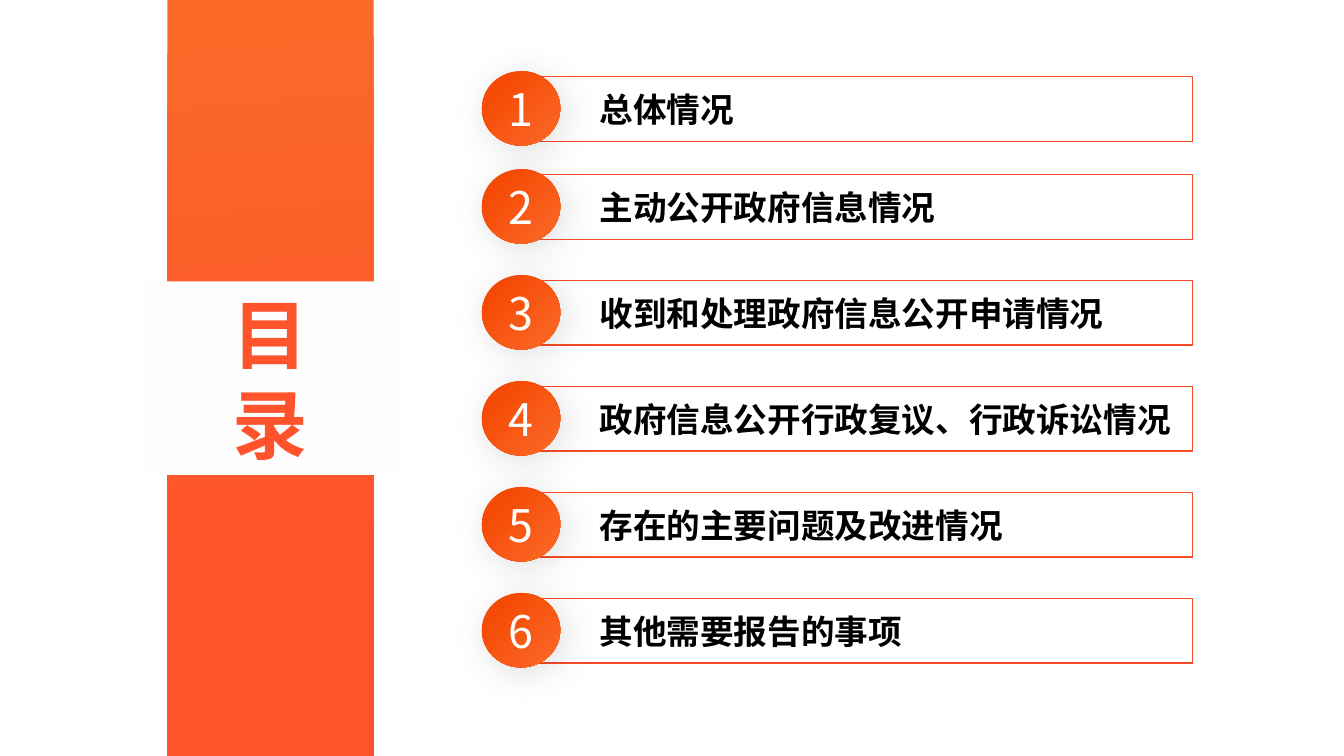
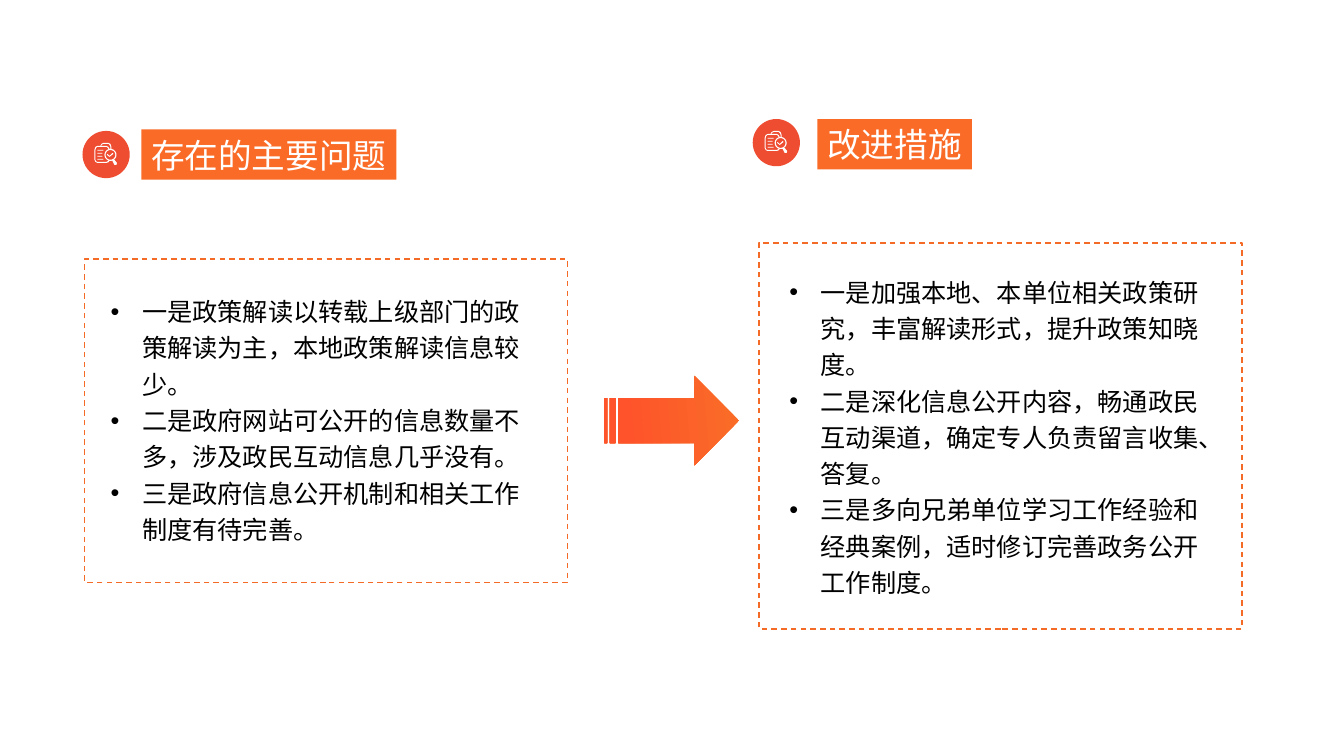
from dataclasses import dataclass
from math import cos, pi, sin

from lxml import etree
from pptx import Presentation
from pptx.dml.color import RGBColor
from pptx.enum import dml, shapes, text
from pptx.oxml import ns
from pptx.util import Cm, Pt

FONT = "Noto Sans CJK SC"
WHITE = RGBColor(0xFF, 0xFF, 0xFF)
BLACK = RGBColor(0x00, 0x00, 0x00)
PAPER = RGBColor(0xFE, 0xFE, 0xFE)
ORANGE = RGBColor(0xFB, 0x69, 0x28)
HEADING_ORANGE = RGBColor(0xFA, 0x6B, 0x27)
ARROW_ORANGE = RGBColor(0xFA, 0x6D, 0x27)
BADGE_ORANGE = RGBColor(0xF5, 0x4A, 0x05)
FRAME_ORANGE = RGBColor(0xF3, 0x6B, 0x27)
RED = RGBColor(0xFE, 0x53, 0x2B)
BAR_RED = RGBColor(0xF7, 0x4B, 0x28)
ICON_RED = RGBColor(0xEE, 0x4D, 0x32)

AGENDA = (
    "总体情况",
    "主动公开政府信息情况",
    "收到和处理政府信息公开申请情况",
    "政府信息公开行政复议、行政诉讼情况",
    "存在的主要问题及改进情况",
    "其他需要报告的事项",
)
AGENDA_TOPS = (1.93, *(4.4 + 2.67 * row for row in range(5)))

GLYPH_GRID = 10
GLYPH_WIDTH = 23
CLIPBOARD = (
    (14, 18), (15, 18), (14, 19.4), (12, 20), (3, 20), (1, 19), (0, 17), (0, 7),
    (1, 4), (3, 3), (6, 3), (7, 1), (9, 0), (14, 0), (16, 1), (17, 4),
    (17, 6), (16, 6), (16, 4), (15, 2), (14, 1), (9, 1), (7, 2), (7, 3),
    (12, 3), (14, 4), (15, 6), (14, 6), (13, 4.6), (12, 4), (3, 4), (1.6, 5),
    (1, 7), (1, 17), (1.6, 18.4), (3, 19), (12, 19),
)
HANDLE = ((20, 17), (18, 18), (20, 22), (22, 22), (22.5, 20))
TICK = ((15, 13), (13, 11), (12.5, 12), (15, 14), (19, 11), (18, 10))
NOTE_LINES = ((7, 9), (10, 8), (13, 8), (16, 9))


@dataclass(frozen=True)
class Area:
    left: float
    top: float
    width: float
    height: float

    def lengths(self) -> tuple:
        return tuple(Cm(side) for side in (self.left, self.top, self.width, self.height))


@dataclass(frozen=True)
class Panel:
    heading: str
    heading_area: Area
    heading_slot: int
    icon_left: float
    icon_top: float
    frame: Area
    insets: tuple
    list_slot: int
    items: tuple


PANELS = (
    Panel(
        "存在的主要问题", Area(3.56, 3.26, 6.43, 1.27), 0, 2.08, 3.3,
        Area(2.13, 6.53, 12.17, 8.15), (0.66, 0.79, 0.89), 2,
        (
            "一是政策解读以转载上级部门的政策解读为主，本地政策解读信息较少。",
            "二是政府网站可公开的信息数量不多，涉及政民互动信息几乎没有。",
            "三是政府信息公开机制和相关工作制度有待完善。",
        ),
    ),
    Panel(
        "改进措施", Area(20.6, 3, 3.89, 1.27), 3, 18.97, 3,
        Area(19.13, 6.12, 12.17, 9.73), (0.76, 0.71, 0.79), 4,
        (
            "一是加强本地、本单位相关政策研究，丰富解读形式，提升政策知晓度。",
            "二是深化信息公开内容，畅通政民互动渠道，确定专人负责留言收集、答复。",
            "三是多向兄弟单位学习工作经验和经典案例，适时修订完善政务公开工作制度。",
        ),
    ),
)


def place(box, area: Area) -> None:
    box.left, box.top, box.width, box.height = area.lengths()


def paint(box, colour: RGBColor) -> None:
    box.fill.solid()
    box.fill.fore_color.rgb = colour


def paint_gradient(box, stops: tuple, clockwise: float) -> None:
    box.fill.gradient()
    box.fill.gradient_angle = 360 - clockwise
    for stop, (position, colour) in zip(box.fill.gradient_stops, stops):
        stop.position = position
        stop.color.rgb = colour


def add_plain(page, kind, area: Area):
    box = page.shapes.add_shape(kind, *area.lengths())
    box.shadow.inherit = False
    box.fill.background()
    box.line.fill.background()
    return box


def outline(box, colour: RGBColor) -> None:
    box.line.color.rgb = colour
    box.line.width = Pt(1)


def write(box, lines: tuple, size: float, colour: RGBColor, bold: bool = False,
          align=text.PP_ALIGN.LEFT, anchor=text.MSO_ANCHOR.MIDDLE, wrap: bool = True) -> None:
    frame = box.text_frame
    frame.text = "\n".join(lines)
    frame.auto_size = text.MSO_AUTO_SIZE.NONE
    frame.word_wrap = wrap
    frame.vertical_anchor = anchor
    for para in frame.paragraphs:
        para.alignment = align
        para.space_before = Pt(0)
        para.font.name = FONT
        para.font.size = Pt(size)
        para.font.bold = bold
        para.font.color.rgb = colour
        defaults = para._p.get_or_add_pPr().get_or_add_defRPr()
        etree.SubElement(defaults, ns.qn("a:ea"), typeface=FONT)


def add_soft_shadow(box) -> None:
    effects = box._element.spPr.find(ns.qn("a:effectLst"))
    shadow = etree.SubElement(
        effects, ns.qn("a:outerShdw"), blurRad=str(Pt(27)), dist=str(Pt(5)),
        dir=str(50 * 60000), algn="ctr", rotWithShape="0")
    colour = etree.SubElement(shadow, ns.qn("a:srgbClr"), val=str(BLACK))
    etree.SubElement(colour, ns.qn("a:alpha"), val="12000")


def add_agenda_row(page, number: int, label: str, top: float) -> None:
    bar = add_plain(page, shapes.MSO_SHAPE.RECTANGLE, Area(12.98, top, 17.07, 1.63))
    outline(bar, BAR_RED)
    bar.text_frame.margin_left = Cm(2.13)
    write(bar, (label,), 24, BLACK, bold=True, wrap=False)
    badge = add_plain(page, shapes.MSO_SHAPE.OVAL, Area(12.14, top - 0.14, 1.98, 1.88))
    paint_gradient(badge, ((0.19, BADGE_ORANGE), (0.98, ORANGE)), 45)
    add_soft_shadow(badge)
    badge.text_frame.margin_left = badge.text_frame.margin_right = 0
    badge.text_frame.margin_top = badge.text_frame.margin_bottom = 0
    write(badge, (str(number),), 32, WHITE, align=text.PP_ALIGN.CENTER, wrap=False)


def ring(radius: float) -> tuple:
    steps = 24
    return tuple((16 + radius * cos(2 * pi * step / steps),
                  12 + radius * sin(2 * pi * step / steps)) for step in range(steps))


def add_icon(page, left: float, top: float) -> None:
    disc = add_plain(page, shapes.MSO_SHAPE.OVAL, Area(left, top, 1.19, 1.19))
    paint(disc, ICON_RED)
    notes = tuple(((3, y), (end, y), (end, y + 0.7), (3, y + 0.7)) for y, end in NOTE_LINES)
    contours = (CLIPBOARD, ring(6), ring(4.9), HANDLE, TICK, *notes)
    scale = Cm(0.58) / (GLYPH_WIDTH * GLYPH_GRID)
    builder = page.shapes.build_freeform(0, 0, scale)
    for contour in contours:
        points = [(x * GLYPH_GRID, y * GLYPH_GRID) for x, y in contour]
        builder.move_to(*points[0])
        builder.add_line_segments(points[1:], close=True)
    glyph = builder.convert_to_shape(Cm(left + 0.3), Cm(top + 0.3))
    glyph.shadow.inherit = False
    paint(glyph, WHITE)
    glyph.line.fill.background()


def add_panel(page, panel: Panel) -> None:
    slots = {slot.placeholder_format.idx: slot for slot in page.placeholders}
    heading = slots[panel.heading_slot]
    place(heading, panel.heading_area)
    paint(heading, HEADING_ORANGE)
    heading.text_frame.margin_left = Cm(0.25)
    heading.text_frame.margin_right = 0
    write(heading, (panel.heading,), 24, WHITE)
    add_icon(page, panel.icon_left, panel.icon_top)
    body = slots[panel.list_slot]
    place(body, panel.frame)
    outline(body, FRAME_ORANGE)
    body.line.dash_style = dml.MSO_LINE.DASH
    frame = body.text_frame
    frame.margin_left, frame.margin_top, frame.margin_right = map(Cm, panel.insets)
    write(body, panel.items, 18, BLACK, anchor=text.MSO_ANCHOR.TOP)
    for para in frame.paragraphs:
        para.line_spacing = 1.2
        properties = para._p.get_or_add_pPr()
        properties.set("marL", str(Cm(0.79)))
        properties.set("indent", str(-Cm(0.79)))


def build_agenda(deck) -> None:
    page = deck.slides.add_slide(deck.slide_layouts[5])
    ribbon = add_plain(page, shapes.MSO_SHAPE.RECTANGLE, Area(4.22, 0, 5.2, 19.05))
    paint_gradient(ribbon, ((0, ORANGE), (0.77, RED)), 85)
    title = page.shapes.title
    title._element.addprevious(ribbon._element)
    place(title, Area(3.51, 7.09, 6.6, 4.88))
    paint(title, PAPER)
    write(title, ("目", "录"), 54, RED, bold=True, align=text.PP_ALIGN.CENTER)
    for number, (label, top) in enumerate(zip(AGENDA, AGENDA_TOPS), 1):
        add_agenda_row(page, number, label, top)


def build_comparison(deck) -> None:
    page = deck.slides.add_slide(deck.slide_layouts[4])
    for panel in PANELS:
        add_panel(page, panel)
    arrow = add_plain(page, shapes.MSO_SHAPE.STRIPED_RIGHT_ARROW, Area(15.23, 9.47, 3.4, 2.26))
    paint_gradient(arrow, ((0, ARROW_ORANGE), (0.84, RED)), 175)
    for slot in list(page.placeholders):
        if not slot.text_frame.text:
            slot._element.getparent().remove(slot._element)


def main() -> None:
    deck = Presentation()
    deck.slide_width, deck.slide_height = Cm(33.87), Cm(19.05)
    build_agenda(deck)
    build_comparison(deck)
    deck.save("out.pptx")


if __name__ == "__main__":
    main()
